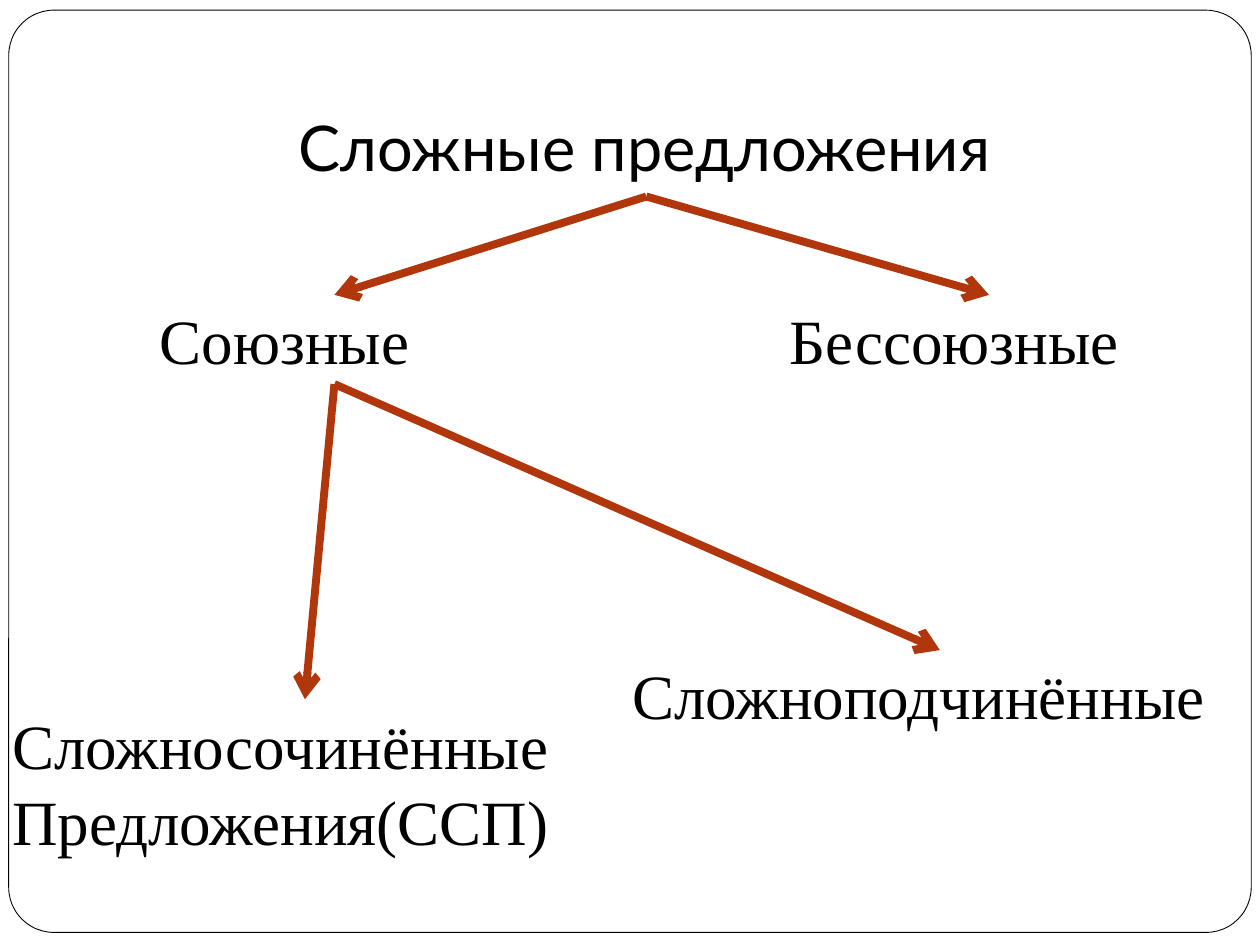
from dataclasses import dataclass

from lxml import etree
from pptx import Presentation
from pptx.dml.color import RGBColor
from pptx.enum.shapes import MSO_CONNECTOR, MSO_SHAPE
from pptx.enum.text import MSO_ANCHOR, MSO_AUTO_SIZE, PP_ALIGN
from pptx.oxml.ns import qn
from pptx.util import Pt

STRAIGHT = MSO_CONNECTOR.STRAIGHT
ROUNDED = MSO_SHAPE.ROUNDED_RECTANGLE
LEFT = PP_ALIGN.LEFT
TOP, BOTTOM = MSO_ANCHOR.TOP, MSO_ANCHOR.BOTTOM
NO_FIT = MSO_AUTO_SIZE.NONE
TOP_SITE, BOTTOM_SITE = 0, 2  # connection sites of a rectangle


@dataclass(frozen=True)
class Theme:
    paper: RGBColor = RGBColor(0xFF, 0xFF, 0xFF)
    ink: RGBColor = RGBColor(0, 0, 0)
    arrow: RGBColor = RGBColor(0xB1, 0x36, 0x0B)
    title_font: str = "Lato"
    label_font: str = "Times New Roman"
    text_size: float = 36
    label_leading: float = 43.5
    frame_width: float = 0.5
    arrow_width: float = 4.5


THEME = Theme()

SLIDE_SIZE = (720, 540)
# Boxes are left, top, width, height in points.
FRAME_BOX = (5, 5.8, 710, 527)
TITLE_BOX = (163.4, 22.3, 411.8, 90)
TREE_BOX = (0, 168.5, 720, 325.4)

# Branches: lines of the label and its box relative to the tree.
CONJUNCTION = (["Союзные"], (84.2, 0, 213.8, 51))
NO_CONJUNCTION = (["Бессоюзные"], (444.2, 0, 241.9, 51))
COMPOUND = (["Сложносочинённые", "Предложения(ССП)"], (0, 231.1, 348.5, 94.3))
COMPLEX = (["Сложноподчинённые"], (354.2, 203, 365.8, 51))


def place(shape, box):
    shape.left, shape.top, shape.width, shape.height = map(Pt, box)


def write(shape, lines, *, font, anchor=TOP, leading=None, bottom_inset=3.6):
    frame = shape.text_frame
    frame.word_wrap = True
    frame.auto_size = NO_FIT
    frame.vertical_anchor = anchor
    frame.margin_left = frame.margin_right = Pt(7.2)
    frame.margin_top, frame.margin_bottom = Pt(3.6), Pt(bottom_inset)
    frame.text = "\n".join(lines)
    for paragraph in frame.paragraphs:
        paragraph.alignment = LEFT
        if leading:
            paragraph.line_spacing = Pt(leading)
        paragraph.font.name = font
        paragraph.font.size = Pt(THEME.text_size)
        paragraph.font.color.rgb = THEME.ink


def add_title(slide, box):
    title = slide.shapes.title
    place(title, box)
    write(title, ["Сложные предложения"], font=THEME.title_font,
          anchor=BOTTOM, bottom_inset=7.2)
    return title


def add_frame(slide, box):
    """Put the rounded page border behind everything else."""
    border = slide.shapes.add_shape(ROUNDED, *map(Pt, box))
    border.adjustments[0] = 0.049
    border.shadow.inherit = False
    border.fill.solid()
    border.fill.fore_color.rgb = THEME.paper
    border.line.color.rgb = THEME.ink
    border.line.width = Pt(THEME.frame_width)
    slide.shapes.title.element.addprevious(border.element)


def add_label(slide, branch, origin):
    lines, (left, top, width, height) = branch
    label = slide.shapes.add_textbox(
        *map(Pt, (origin[0] + left, origin[1] + top, width, height)))
    write(label, lines, font=THEME.label_font, leading=THEME.label_leading)
    return label


def add_arrow(slide, parent, child):
    arrow = slide.shapes.add_connector(STRAIGHT, 0, 0, 0, 0)
    arrow.begin_connect(parent, BOTTOM_SITE)
    arrow.end_connect(child, TOP_SITE)
    arrow.line.color.rgb = THEME.arrow
    arrow.line.width = Pt(THEME.arrow_width)
    etree.SubElement(arrow.line._get_or_add_ln(), qn("a:tailEnd"), type="arrow")
    etree.SubElement(arrow.element.spPr, qn("a:effectLst"))


def add_tree(slide, root, box):
    branches = (CONJUNCTION, NO_CONJUNCTION, COMPOUND, COMPLEX)
    conjunction, no_conjunction, compound, complex_ = [
        add_label(slide, branch, box[:2]) for branch in branches]
    for parent, child in ((conjunction, compound), (conjunction, complex_),
                          (root, conjunction), (root, no_conjunction)):
        add_arrow(slide, parent, child)


def main():
    prs = Presentation()
    prs.slide_width, prs.slide_height = map(Pt, SLIDE_SIZE)
    slide = prs.slides.add_slide(prs.slide_layouts[5])
    slide.background.fill.solid()
    slide.background.fill.fore_color.rgb = THEME.paper
    title = add_title(slide, TITLE_BOX)
    add_frame(slide, FRAME_BOX)
    add_tree(slide, title, TREE_BOX)
    prs.save("out.pptx")


if __name__ == "__main__":
    main()
